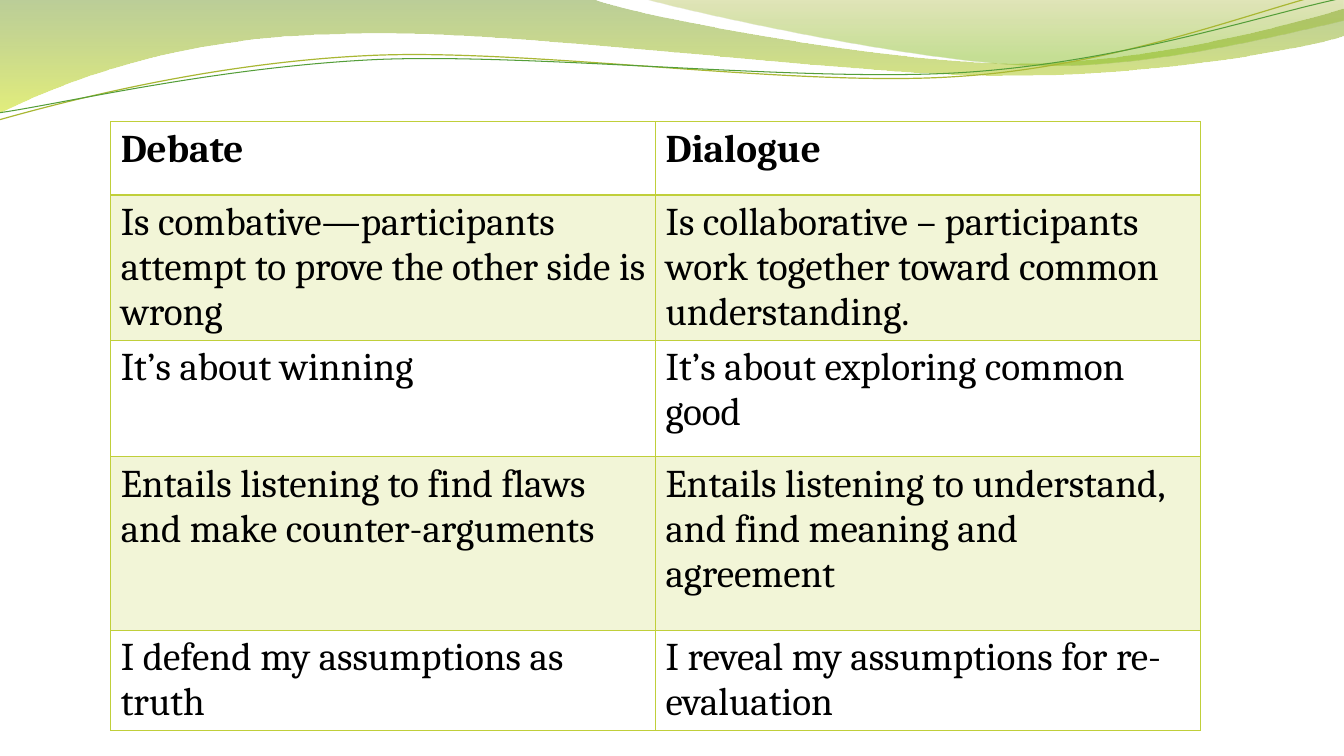
import math
from dataclasses import dataclass

from lxml import etree
from pptx import Presentation
from pptx.dml.color import RGBColor
from pptx.oxml.ns import qn
from pptx.util import Cm, Pt

INCH = 2.54  # centimetres


@dataclass(frozen=True)
class Theme:
    font: str = "Cambria"
    text_size: int = 28
    text: str = "000000"
    lime: str = "C0CF3A"
    band_opacity: int = 20
    green_wave: tuple = ((0, "69921C", 45), (1, "CCE10F", 55))
    pale_wave: tuple = ((0, "9BAA1A", 30), (0.8, "81BA16", 45))
    olive_strand: str = "A9B733"
    green_strand: str = "549E39"


theme = Theme()


def trace(start, segments, closed):
    """Build an outline in inches; 2-number segments are lines, 6-number ones Bézier curves."""
    numbers = [number for segment in segments for number in segment]
    corners = [(Cm(x * INCH), Cm(y * INCH)) for x, y in zip(numbers[::2], numbers[1::2])]
    builder = slide.shapes.build_freeform(Cm(start[0] * INCH), Cm(start[1] * INCH))
    builder.add_line_segments(corners, close=closed)
    outline = builder.convert_to_shape()
    outline.shadow.inherit = False
    edges = iter(list(outline.element.iter(qn("a:lnTo"))))
    for segment in segments:
        edge = next(edges)
        if len(segment) == 6:
            curve = etree.Element(qn("a:cubicBezTo"))
            edge.addprevious(curve)
            for handle in (edge, next(edges), next(edges)):
                curve.append(handle[0])
                handle.getparent().remove(handle)
    return outline


def set_opacity(element, percents):
    for color, percent in zip(element.iter(qn("a:srgbClr")), percents):
        etree.SubElement(color, qn("a:alpha"), val=str(percent * 1000))


prs = Presentation()
prs.slide_width, prs.slide_height = Cm(33.87), Cm(19.05)
slide = prs.slides.add_slide(prs.slide_layouts[6])

# Header waves
waves = [
    (theme.green_wave, (0, 0), [
        (5.87, -0.01),
        (6.34, 0.17, 8.84, 0.63, 10.11, 0.63),
        (11.37, 0.63, 12.77, 0.26, 13.33, 0.09),
        (13.34, 0.36),
        (13.11, 0.44, 11.59, 0.76, 9.94, 0.75),
        (8.29, 0.75, 5.09, 0.28, 3.43, 0.34),
        (1.72, 0.36, 0.61, 0.83, -0.02, 1.13),
        (0, 0)]),
    (theme.pale_wave, (6.38, -0.01), [
        (6.79, 0.11, 9.09, 0.62, 10.25, 0.65),
        (11.4, 0.69, 12.82, 0.32, 13.33, 0.21),
        (13.33, 0),
        (6.38, -0.01)]),
]
for stops, start, segments in waves:
    wave = trace(start, segments, True)
    wave.line.fill.background()
    wave.fill.gradient()
    wave.fill.gradient_angle = 270
    for stop, (position, color, _) in zip(wave.fill.gradient_stops, stops):
        stop.position = position
        stop.color.rgb = RGBColor.from_string(color)
    set_opacity(wave.element, [opacity for _, _, opacity in stops])

# Thin strands along the waves, laid level about a pivot and then tilted
tilt = 357.3
cosine, sine = math.cos(math.radians(tilt)), math.sin(math.radians(tilt))
strands = [
    (theme.olive_strand, 0.85, (6.65, 0.57), (-0.01, 1.19), [
        (0.63, 1.01, 2.1, 0.62, 3.69, 0.55),
        (5.27, 0.48, 7.89, 0.87, 9.49, 0.76),
        (11.1, 0.66, 12.51, 0.08, 13.3, -0.1)]),
    (theme.green_strand, 0.75, (6.67, 0.59), (-0.01, 1.12), [
        (0.62, 1.03, 2.18, 0.66, 3.77, 0.59),
        (5.37, 0.53, 7.96, 0.82, 9.55, 0.72),
        (11.14, 0.62, 12.55, 0.14, 13.33, -0.02)]),
]
for color, weight, (pivot_x, pivot_y), start, segments in strands:
    level = []
    for segment in [start, *segments]:
        offsets = [(x - pivot_x, y - pivot_y) for x, y in zip(segment[::2], segment[1::2])]
        level.append([number for dx, dy in offsets
                      for number in (pivot_x + dx * cosine + dy * sine,
                                     pivot_y - dx * sine + dy * cosine)])
    strand = trace(level[0], level[1:], False)
    strand.rotation = tilt
    strand.fill.background()
    strand.line.color.rgb = RGBColor.from_string(color)
    strand.line.width = Pt(weight)

# Comparison table
comparison = [
    ("Debate", "Dialogue"),
    ("Is combative—participants attempt to prove the other side is wrong",
     "Is collaborative – participants work together toward common understanding."),
    ("It’s about winning", "It’s about exploring common good"),
    ("Entails listening to find flaws and make counter-arguments",
     "Entails listening to understand, and find meaning and agreement"),
    ("I defend my assumptions as truth", "I reveal my assumptions for re-evaluation"),
]
row_heights = [1.85, 2.93, 2.93, 4.37, 2.29]
frame = slide.shapes.add_table(len(comparison), 2, Cm(2.79), Cm(3.07), Cm(27.46), Cm(15.6))
table = frame.table
for column in table.columns:
    column.width = Cm(13.73)

for row_index, (sides, height) in enumerate(zip(comparison, row_heights)):
    table.rows[row_index].height = Cm(height)
    for column_index, wording in enumerate(sides):
        cell = table.cell(row_index, column_index)
        if row_index % 2:
            cell.fill.solid()
            cell.fill.fore_color.rgb = RGBColor.from_string(theme.lime)
        else:
            cell.fill.background()
        run = cell.text_frame.paragraphs[0].add_run()
        run.text = wording
        run.font.name = theme.font
        run.font.size = Pt(theme.text_size)
        run.font.bold = row_index == 0
        run.font.color.rgb = RGBColor.from_string(theme.text)
frame.height = Cm(15.6)

for row_index, row in enumerate(frame.element.iter(qn("a:tr"))):
    for properties in row.iter(qn("a:tcPr")):
        set_opacity(properties, [theme.band_opacity])
        for place, side in enumerate(("lnL", "lnR", "lnT", "lnB")):
            under_header = (row_index, side) in ((0, "lnB"), (1, "lnT"))
            border = etree.Element(qn(f"a:{side}"), w=str(Pt(2 if under_header else 1)))
            fill = etree.SubElement(border, qn("a:solidFill"))
            etree.SubElement(fill, qn("a:srgbClr"), val=theme.lime)
            properties.insert(place, border)

prs.save("out.pptx")
